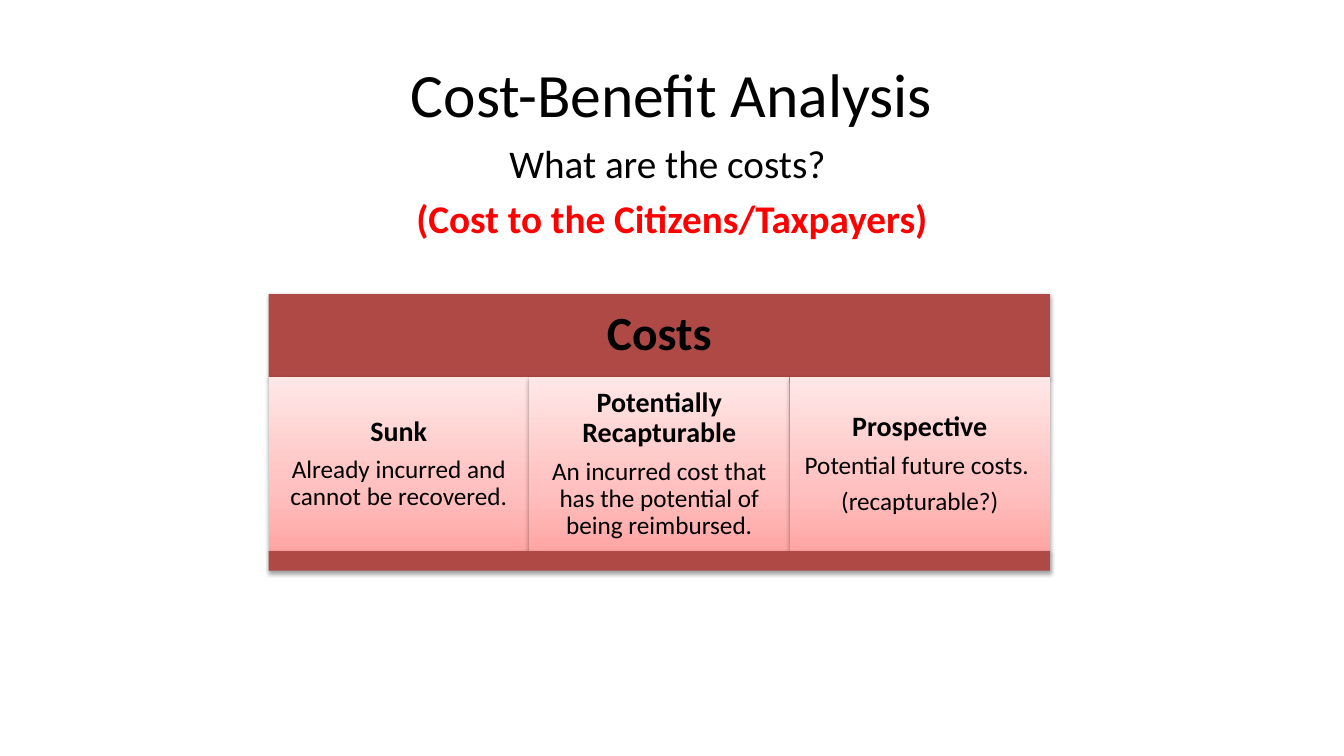
from lxml.etree import SubElement
from pptx import Presentation
from pptx.dml.color import RGBColor
from pptx.enum.shapes import MSO_SHAPE as Shape
from pptx.enum.text import MSO_ANCHOR as Anchor, MSO_AUTO_SIZE as AutoSize, PP_ALIGN as Align
from pptx.oxml import parse_xml
from pptx.oxml.ns import nsdecls, qn
from pptx.util import Cm, Pt

FONT = "Calibri"
BLACK = RGBColor(0x00, 0x00, 0x00)
RED = RGBColor(0xFF, 0x00, 0x00)
BRICK = RGBColor(0xAE, 0x49, 0x46)
# Gradient stops, from the bottom edge to the top edge
PINKS = [
    (0, RGBColor(0xFF, 0xA6, 0xA5)),
    (35, RGBColor(0xFF, 0xC0, 0xBF)),
    (100, RGBColor(0xFF, 0xE7, 0xE7)),
]

# Cost diagram, in centimetres
LEFT, TOP, WIDTH = 6.77, 7.41, 19.69
HEADER_HEIGHT, COLUMN_HEIGHT, FOOTER_HEIGHT = 2.09, 4.39, 0.49

HEADING = {"size": Pt(20), "bold": True}
DETAIL = {"size": Pt(18), "bold": False}
COST_TYPES = [
    [("Sunk", HEADING), ("Already incurred and cannot be recovered.", DETAIL)],
    [("Potentially Recapturable", HEADING),
     ("An incurred cost that has the potential of being reimbursed.", DETAIL)],
    [("Prospective", HEADING), ("Potential future costs. ", DETAIL), ("(recapturable?)", DETAIL)],
]


def write_lines(text_frame, lines, spacing=None):
    """Write centred paragraphs; each line is (text, font values)."""
    for index, (text, values) in enumerate(lines):
        paragraph = text_frame.paragraphs[0] if index == 0 else text_frame.add_paragraph()
        paragraph.alignment = Align.CENTER
        if spacing:
            paragraph.line_spacing = spacing
            paragraph.space_after = Pt(values["size"].pt * 0.35)
        run = paragraph.add_run()
        run.text = text
        run.font.color.rgb = values.get("color", BLACK)
        for name, value in {"name": FONT, "size": values["size"],
                            "bold": values.get("bold", False)}.items():
            setattr(run.font, name, value)


def fill_placeholder(placeholder, box, lines, anchor):
    for name, value in zip(("left", "top", "width", "height"), box):
        setattr(placeholder, name, Cm(value))
    frame = placeholder.text_frame
    for name, value in {"word_wrap": True, "auto_size": AutoSize.NONE,
                        "vertical_anchor": anchor}.items():
        setattr(frame, name, value)
    write_lines(frame, lines)


def remove_bullets(text_frame):
    for paragraph in text_frame.paragraphs:
        properties = paragraph._p.get_or_add_pPr()
        properties.set("marL", "0")
        properties.set("indent", "0")
        SubElement(properties, qn("a:buNone"))


def add_shadow(shape):
    shape.shadow.inherit = False
    effects = shape._element.spPr.find(qn("a:effectLst"))
    effects.append(parse_xml(
        f'<a:outerShdw {nsdecls("a")} blurRad="40000" dist="20000" dir="5400000" rotWithShape="0">'
        '<a:srgbClr val="000000"><a:alpha val="38000"/></a:srgbClr></a:outerShdw>'))


def set_gradient(shape, stops):
    shape.fill.gradient()
    shape.fill.gradient_angle = 90
    stop_list = shape._element.spPr.find(qn("a:gradFill")).find(qn("a:gsLst"))
    for old_stop in list(stop_list):
        stop_list.remove(old_stop)
    for position, color in stops:
        stop = SubElement(stop_list, qn("a:gs"), pos=str(position * 1000))
        SubElement(stop, qn("a:srgbClr"), val=str(color))


def add_block(slide, box, lines=(), inset=0.2, color=None):
    """Add a shadowed rectangle, plain if a color is given, else pink gradient."""
    shape = slide.shapes.add_shape(Shape.RECTANGLE, *(Cm(value) for value in box))
    if color is None:
        set_gradient(shape, PINKS)
    else:
        shape.fill.solid()
        shape.fill.fore_color.rgb = color
    shape.line.fill.background()
    add_shadow(shape)
    frame = shape.text_frame
    frame.word_wrap = True
    frame.vertical_anchor = Anchor.MIDDLE
    for side in ("left", "top", "right", "bottom"):
        setattr(frame, f"margin_{side}", Cm(inset))
    write_lines(frame, lines, spacing=0.9)


def add_cost_diagram(slide):
    add_block(slide, (LEFT, TOP, WIDTH, HEADER_HEIGHT),
              [("Costs", {"size": Pt(34), "bold": True})], inset=0.36, color=BRICK)
    column_top = TOP + HEADER_HEIGHT
    column_width = WIDTH / len(COST_TYPES)
    for index, lines in enumerate(COST_TYPES):
        add_block(slide, (LEFT + index * column_width, column_top, column_width, COLUMN_HEIGHT), lines)
    add_block(slide, (LEFT, column_top + COLUMN_HEIGHT, WIDTH, FOOTER_HEIGHT), color=BRICK)


def main():
    presentation = Presentation()
    presentation.slide_width, presentation.slide_height = Cm(33.87), Cm(19.05)
    slide = presentation.slides.add_slide(presentation.slide_layouts[1])

    # Title and question
    fill_placeholder(slide.shapes.title, (1.69, 0.76, 30.48, 3.18),
                     [("Cost-Benefit Analysis", {"size": Pt(44)})], Anchor.MIDDLE)
    body = slide.placeholders[1]
    fill_placeholder(body, (5.5, 3.39, 22.86, 4.45), [
        ("What are the costs? ", {"size": Pt(28)}),
        ("(Cost to the Citizens/Taxpayers)", {"size": Pt(28), "bold": True, "color": RED}),
    ], Anchor.TOP)
    remove_bullets(body.text_frame)

    # Types of cost
    add_cost_diagram(slide)
    presentation.save("out.pptx")


if __name__ == "__main__":
    main()
